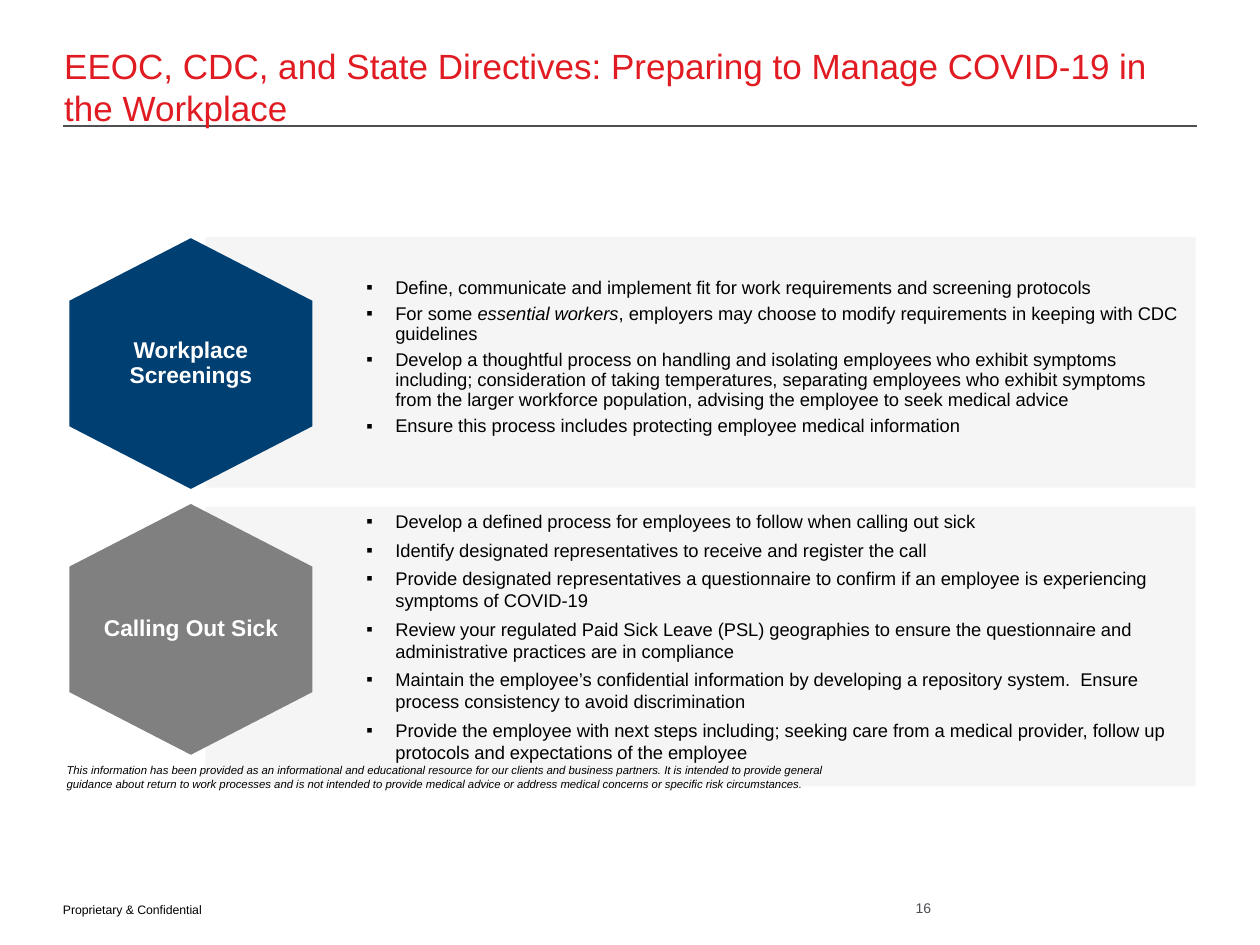
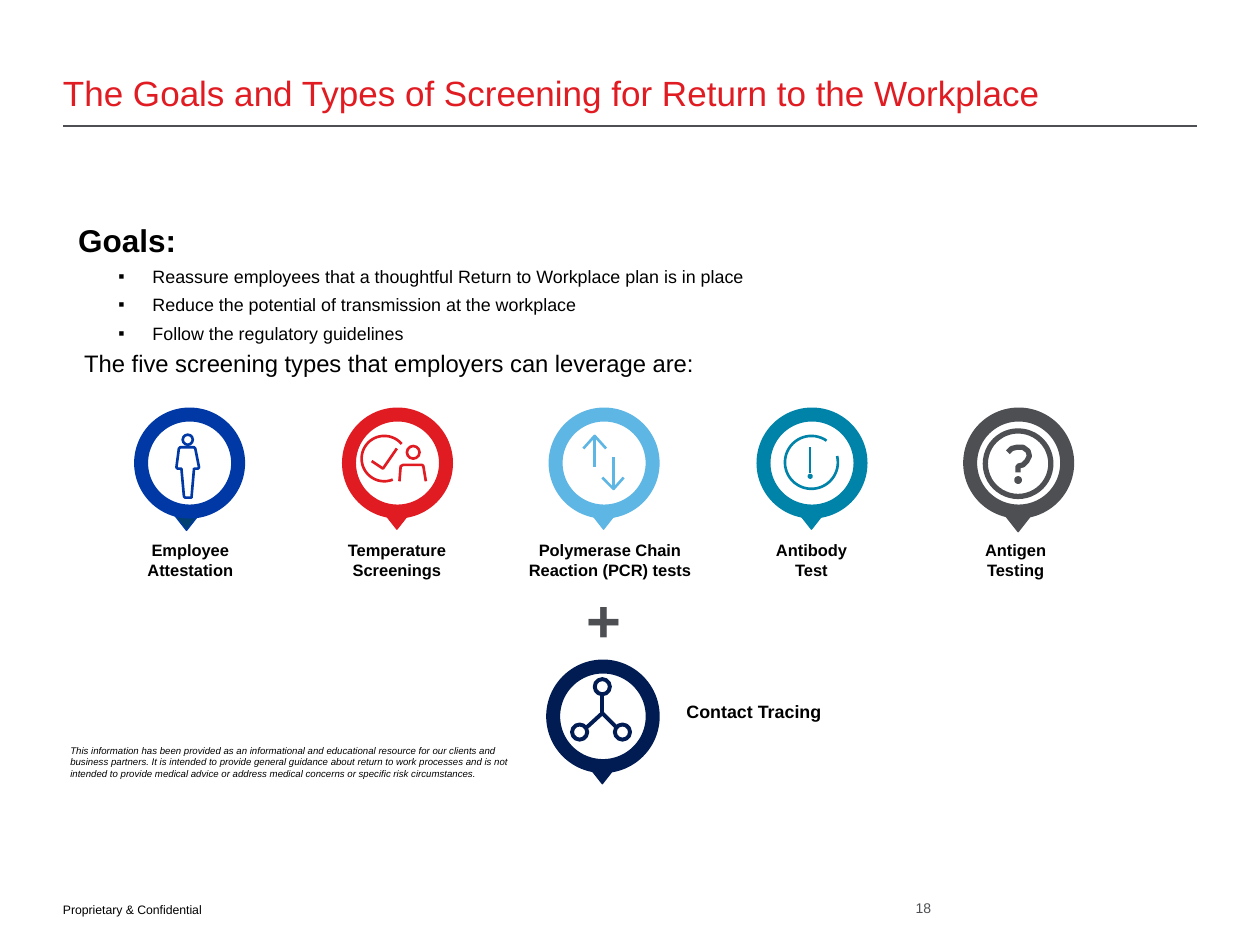
import math

import lxml.etree
import pptx
import pptx.dml.color
import pptx.enum.shapes
import pptx.enum.text
import pptx.oxml.ns
import pptx.util

Inches = pptx.util.Inches
Pt = pptx.util.Pt
rgb = pptx.dml.color.RGBColor.from_string
qn = pptx.oxml.ns.qn
PRESET = pptx.enum.shapes.MSO_SHAPE
ALIGN = pptx.enum.text.PP_ALIGN
ANCHOR = pptx.enum.text.MSO_ANCHOR

FONT = "Arial"
BLACK, WHITE, RED, GRAY = "000000", "FFFFFF", "E11B22", "4D4F53"
BLUE, SKY, TEAL, NAVY, STEEL = "0039A6", "5EB6E4", "0083A9", "001C53", "003F72"
DISCLAIMER = (
    "This information has been provided as an informational and educational resource "
    "for our clients and business partners. It is intended to provide general guidance "
    "about return to work processes and is not intended to provide medical advice or "
    "address medical concerns or specific risk circumstances."
)


def draw(slide, form, where, fill=None, line=None, width=1.5):
    """Add a "text" box or preset at (left, top, width, height), or a "path" through points.

    A path of two points is a connector; one that ends where it starts is closed.
    """
    if form == "text":
        box = slide.shapes.add_textbox(*map(Inches, where))
        box.text_frame.word_wrap = True
        return box
    if form == "path":
        points = [(Inches(x), Inches(y)) for x, y in where]
        if len(points) == 2:
            shape = slide.shapes.add_connector(
                pptx.enum.shapes.MSO_CONNECTOR.STRAIGHT, *points[0], *points[1])
            lxml.etree.SubElement(shape.element.spPr, qn("a:effectLst"))
            shape.line.color.rgb = rgb(line)
            shape.line.width = Pt(width)
            return shape
        builder = slide.shapes.build_freeform(*points[0], scale=1.0)
        builder.add_line_segments(points[1:], close=points[0] == points[-1])
        shape = builder.convert_to_shape()
    else:
        shape = slide.shapes.add_shape(form, *map(Inches, where))
    shape.shadow.inherit = False
    if fill:
        shape.fill.solid()
        shape.fill.fore_color.rgb = rgb(fill)
    else:
        shape.fill.background()
    if line:
        shape.line.color.rgb = rgb(line)
        shape.line.width = Pt(width)
    else:
        shape.line.fill.background()
    return shape


def write(shape, paragraphs, size, color=BLACK, style="", align=ALIGN.LEFT, anchor=ANCHOR.TOP,
          inset=(0.1, 0.05), before=0, spacing=None, bullet=None):
    """Append paragraphs, each a string or a list of (text, style); style holds "b" and/or "i"."""
    frame = shape.text_frame
    frame.vertical_anchor = anchor
    frame.margin_left = frame.margin_right = Inches(inset[0])
    frame.margin_top = frame.margin_bottom = Inches(inset[1])
    for runs in paragraphs:
        first = not frame.paragraphs[0].runs
        paragraph = frame.paragraphs[0] if first else frame.add_paragraph()
        paragraph.alignment = align
        if spacing:
            paragraph.line_spacing = spacing
        if before and not first:
            paragraph.space_before = Pt(before)
        if bullet:
            margin, hang = bullet
            properties = paragraph._p.get_or_add_pPr()
            properties.set("marL", str(Inches(margin)))
            properties.set("indent", str(-Inches(hang)))
            lxml.etree.SubElement(properties, qn("a:buFont")).set("typeface", FONT)
            lxml.etree.SubElement(properties, qn("a:buChar")).set("char", "▪")
        for text, look in [(runs, style)] if isinstance(runs, str) else runs:
            run = paragraph.add_run()
            run.text = text
            run.font.name = FONT
            run.font.size = Pt(size)
            run.font.color.rgb = rgb(color)
            run.font.bold = "b" in look
            run.font.italic = "i" in look


presentation = pptx.Presentation()
presentation.slide_width = Inches(10)
presentation.slide_height = Inches(7.5)

# Title, rule, footer, page number and disclaimer of both slides
pages = [
    ("EEOC, CDC, and State Directives: Preparing to Manage COVID-19 in the Workplace",
     (0.51, 0.57, 8.97, 0.45), "16", (0.43, 6.01, 6.31, 0.44), 6.5),
    ("The Goals and Types of Screening for Return to the Workplace",
     (0.5, 0.33, 9, 0.57), "18", (0.46, 5.86, 3.76, 0.48), 5.5),
]
slides = []
panels = [(1.88, 1.99), (4.02, 2.22)]
for title, title_box, number, disclaimer_box, disclaimer_size in pages:
    slide = presentation.slides.add_slide(presentation.slide_layouts[6])
    if not slides:
        for top, height in panels:
            panel = draw(slide, PRESET.RECTANGLE, (1.63, top, 7.86, height), fill="BCBDC0")
            tint = panel.element.spPr.find(qn("a:solidFill"))[0]
            lxml.etree.SubElement(tint, qn("a:alpha")).set("val", "15000")
    draw(slide, "path", [(0.5, 1), (9.5, 1)], line=GRAY, width=0.75)
    for words, box, size, color, align in [
        (title, title_box, 20, RED, ALIGN.LEFT),
        ("Proprietary & Confidential", (0.5, 7.04, 6.6, 0.24), 7, BLACK, ALIGN.LEFT),
        (number, (7, 7.14, 0.39, 0.13), 8, GRAY, ALIGN.RIGHT),
    ]:
        write(draw(slide, "text", box), [words], size, color, align=align,
              anchor=ANCHOR.BOTTOM, inset=(0, 0))
    write(draw(slide, "text", disclaimer_box), [DISCLAIMER], disclaimer_size, style="i")
    slides.append(slide)
directives, screening = slides

# Slide 1: a hexagon and its list of directives per topic
topics = [
    ("Workplace Screenings", STEEL, 1.89, (2.81, 2.16, 6.66, 1.38), 0.9, [
        "Define, communicate and implement fit for work requirements and screening protocols",
        [("For some ", ""), ("essential workers", "i"),
         (", employers may choose to modify requirements in keeping with CDC guidelines", "")],
        "Develop a thoughtful process on handling and isolating employees who exhibit symptoms "
        "including; consideration of taking temperatures, separating employees who exhibit "
        "symptoms from the larger workforce population, advising the employee to seek medical "
        "advice",
        "Ensure this process includes protecting employee medical information",
    ]),
    ("Calling Out Sick", "808080", 4.0, (2.81, 4, 6.68, 2.15), None, [
        "Develop a defined process for employees to follow when calling out sick",
        "Identify designated representatives to receive and register the call",
        "Provide designated representatives a questionnaire to confirm if an employee is "
        "experiencing symptoms of COVID-19",
        "Review your regulated Paid Sick Leave (PSL) geographies to ensure the questionnaire "
        "and administrative practices are in compliance",
        "Maintain the employee’s confidential information by developing a repository system.  "
        "Ensure process consistency to avoid discrimination",
        "Provide the employee with next steps including; seeking care from a medical provider, "
        "follow up protocols and expectations of the employee",
    ]),
]
hexagon_corners = [(0.5, 0), (0, 0.25), (0, 0.75), (0.5, 1), (1, 0.75), (1, 0.25), (0.5, 0)]
for topic, color, top, box, spacing, steps in topics:
    outline = [(0.55 + 1.93 * x, top + 1.99 * y) for x, y in hexagon_corners]
    hexagon = draw(directives, "path", outline, fill=color)
    hexagon.text_frame.word_wrap = True
    write(hexagon, [topic], 13, WHITE, "b", ALIGN.CENTER, ANCHOR.MIDDLE, (0.07, 0.04),
          spacing=0.9)
    write(draw(directives, "text", box), steps, 10.5, before=3.7, spacing=spacing,
          bullet=(0.23, 0.23))

# Slide 2: goals
goals = draw(screening, "text", (0.62, 1.75, 8.19, 1.05))
write(goals, ["Goals:"], 18, style="b", inset=(0, 0))
write(goals, [
    "Reassure employees that a thoughtful Return to Workplace plan is in place",
    "Reduce the potential of transmission at the workplace",
    "Follow the regulatory guidelines",
], 10.2, inset=(0, 0), before=4, bullet=(0.59, 0.27))
write(draw(screening, "text", (0.57, 2.72, 7.6, 0.33)),
      ["The five screening types that employers can leverage are:"], 13.6)

# Pins: ring left, top and size, pointer left and top, ring and pointer colours
ring_lefts = [round(1.12 + 1.645 * i, 2) for i in range(5)]
pins = [(left, 3.29, 0.77, left + 0.27, 4.06, color, color)
        for left, color in zip(ring_lefts[1:4], (RED, SKY, TEAL))]
pins += [
    (ring_lefts[0], 3.29, 0.77, 1.37, 4.07, BLUE, STEEL),
    (ring_lefts[4], 3.29, 0.77, 7.97, 4.08, GRAY, GRAY),
    (4.39, 5.29, 0.79, 4.67, 6.08, NAVY, NAVY),
]
for left, top, size, pointer_left, pointer_top, color, pointer_color in pins:
    pointer = draw(screening, PRESET.ISOSCELES_TRIANGLE,
                   (pointer_left, pointer_top, 0.22, 0.14), pointer_color, color, 0.75)
    pointer.rotation = 180
    draw(screening, PRESET.OVAL, (left, top, size, size), WHITE, color, 8)

labels = [
    ("Employee Attestation", 0.93, 1.16),
    ("Temperature Screenings", 2.45, 1.4),
    ("Polymerase Chain Reaction (PCR) tests", 4.04, 1.6),
    ("Antibody Test", 6.02, 0.84),
    ("Antigen Testing", 7.64, 0.84),
]
for label, left, width in labels:
    write(draw(screening, "text", (left, 4.24, width, 0.42)), [label], 9.4, style="b",
          align=ALIGN.CENTER)
write(draw(screening, "text", (4.56, 4.58, 0.74, 0.67)), ["+"], 34.1, GRAY, "b")
write(draw(screening, "text", (5.35, 5.51, 1.47, 0.27)), ["Contact Tracing"], 10.2, style="b")

# Circles in the icons: centre, radius, colour, line width
hub = (4.78, 5.66)
contacts = [((4.78, 5.45), (4.78, 5.52)), ((4.6, 5.81), (4.66, 5.77)), ((4.94, 5.81), (4.89, 5.77))]
circles = [
    (1.49, 3.49, 0.04, BLUE, 1.5),
    (3.28, 3.59, 0.05, RED, 1.5),
    (6.43, 3.78, 0.01, TEAL, 1.5),
    (8.08, 3.68, 0.26, GRAY, 3),
    (8.08, 3.81, 0.01, GRAY, 3),
] + [(x, y, 0.06, NAVY, 2.25) for (x, y), spoke_end in contacts]
for x, y, radius, color, width in circles:
    draw(screening, PRESET.OVAL, (x - radius, y - radius, 2 * radius, 2 * radius),
         line=color, width=width)

# Open arcs: centre, radius, start and end in degrees clockwise from the right
for x, y, radius, start, end, color in [
    (3.05, 3.64, 0.18, 68, 320, RED),
    (6.44, 3.67, 0.21, -14, 305, TEAL),
]:
    angles = [math.radians(start + (end - start) * i / 48) for i in range(49)]
    draw(screening, "path",
         [(x + radius * math.cos(a), y + radius * math.sin(a)) for a in angles], line=color)

person = [(1.42, 3.56), (1.43, 3.55), (1.54, 3.55), (1.55, 3.56), (1.58, 3.71), (1.57, 3.72),
          (1.54, 3.72), (1.52, 3.95), (1.47, 3.95), (1.46, 3.94), (1.44, 3.72), (1.41, 3.72),
          (1.4, 3.71), (1.42, 3.56)]
check = [(2.95, 3.66), (3.04, 3.72), (3.15, 3.56)]
shoulders = [(3.17, 3.82), (3.18, 3.7), (3.2, 3.69), (3.35, 3.69), (3.36, 3.7), (3.38, 3.82)]
question = [(8, 3.59), (8.03, 3.56), (8.07, 3.55), (8.12, 3.55), (8.16, 3.58), (8.17, 3.62),
            (8.15, 3.66), (8.12, 3.69), (8.08, 3.7), (8.08, 3.75)]
strokes = [
    (person, BLUE, 1.5),
    (check, RED, 1.5),
    (shoulders, RED, 1.5),
    ([(4.72, 3.46), (4.72, 3.71)], SKY, 1.5),
    ([(4.63, 3.56), (4.72, 3.46), (4.81, 3.56)], SKY, 1.5),
    ([(4.87, 3.63), (4.87, 3.88)], SKY, 1.5),
    ([(4.78, 3.79), (4.87, 3.88), (4.95, 3.79)], SKY, 1.5),
    ([(6.43, 3.55), (6.43, 3.75)], TEAL, 1.5),
    (question, GRAY, 3),
] + [([hub, spoke_end], NAVY, 2.25) for contact, spoke_end in contacts]
for points, color, width in strokes:
    draw(screening, "path", points, line=color, width=width)

presentation.save("out.pptx")
